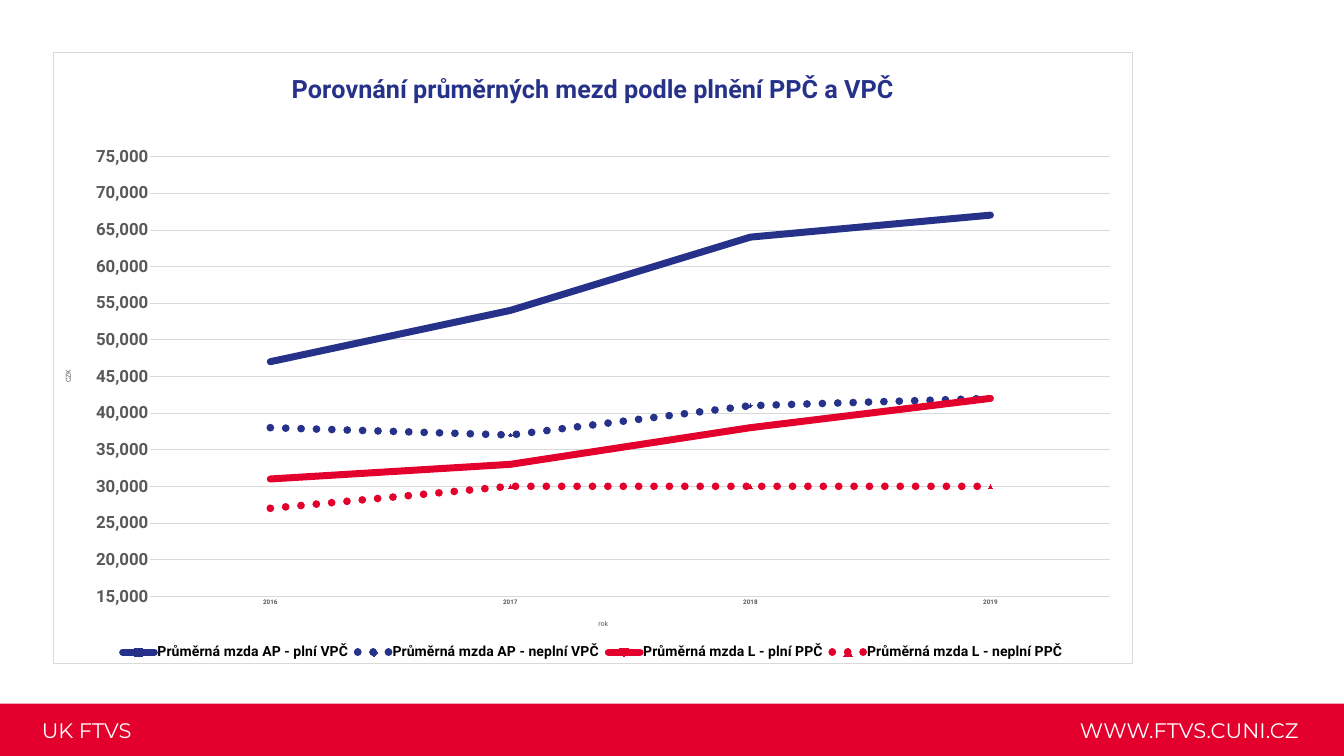
from dataclasses import dataclass

from lxml.etree import SubElement
from pptx import Presentation
from pptx.chart.data import CategoryChartData
from pptx.dml.color import RGBColor
from pptx.enum.chart import XL_CHART_TYPE as ChartType, XL_LEGEND_POSITION as LegendPosition
from pptx.enum.chart import XL_TICK_MARK as TickMark
from pptx.enum.dml import MSO_LINE as Dash
from pptx.enum.shapes import MSO_SHAPE as Shape
from pptx.enum.text import MSO_ANCHOR as Anchor, MSO_AUTO_SIZE as AutoSize, PP_ALIGN as Align
from pptx.oxml import parse_xml
from pptx.oxml.ns import nsdecls, qn
from pptx.util import Inches, Pt


@dataclass(frozen=True)
class Theme:
    """Colours, fonts and type sizes of the slide."""
    red: str = "E3002C"
    blue: str = "263289"
    white: str = "FFFFFF"
    black: str = "000000"
    grey: str = "595959"
    rule: str = "D9D9D9"
    body_font: str = "Roboto"
    footer_font: str = "Montserrat"
    title_size: int = 36
    footer_size: int = 30
    value_size: int = 24
    legend_size: int = 20
    small_size: int = 10
    category_size: int = 9
    rule_width: float = 0.75


THEME = Theme()
YEARS = ["2016", "2017", "2018", "2019"]
WAGES = [
    ("Průměrná mzda AP - plní VPČ", [47000, 54000, 64000, 67000], THEME.blue, False),
    ("Průměrná mzda AP - neplní VPČ", [38000, 37000, 41000, 42000], THEME.blue, True),
    ("Průměrná mzda L - plní PPČ", [31000, 33000, 38000, 42000], THEME.red, False),
    ("Průměrná mzda L - neplní PPČ", [27000, 30000, 30000, 30000], THEME.red, True),
]


def style_font(font, size, color, bold=False, name=THEME.body_font):
    """Set the size, colour, weight and name of a font."""
    font.size, font.bold, font.name = Pt(size), bold, name
    font.color.rgb = RGBColor.from_string(color)


def write_text(text_frame, text, align=None, **font_format):
    """Write one formatted paragraph into a text frame."""
    paragraph = text_frame.paragraphs[0]
    paragraph.alignment = align
    run = paragraph.add_run()
    run.text = text
    style_font(run.font, **font_format)


def style_line(line, color, width):
    """Set the colour and width of a line."""
    line.color.rgb = RGBColor.from_string(color)
    line.width = Pt(width)


def add_band(slide):
    """Add the red band along the bottom edge."""
    band = slide.shapes.add_shape(
        Shape.RECTANGLE, Inches(-0.03), Inches(13.96), Inches(26.72), Inches(1.06))
    band.shadow.inherit = False
    band.fill.solid()
    band.fill.fore_color.rgb = RGBColor.from_string(THEME.red)
    band.line.fill.background()


def add_footer_text(slide, text, left, align):
    """Add one line of text on the footer band."""
    box = slide.shapes.add_textbox(Inches(left), Inches(14.18), Inches(7.07), Inches(0.61))
    frame = box.text_frame
    frame.word_wrap = True
    frame.auto_size = AutoSize.SHAPE_TO_FIT_TEXT
    frame.vertical_anchor = Anchor.MIDDLE
    frame.margin_left = frame.margin_right = Inches(0.06)
    frame.margin_top = frame.margin_bottom = Inches(0.06)
    write_text(frame, text, align=align, size=THEME.footer_size,
               color=THEME.white, name=THEME.footer_font)


def style_axis(axis, title, size):
    """Format the title and tick labels of an axis."""
    axis.major_tick_mark = axis.minor_tick_mark = TickMark.NONE
    style_font(axis.tick_labels.font, size, THEME.grey, bold=True)
    write_text(axis.axis_title.text_frame, title, size=THEME.small_size, color=THEME.grey)


def style_value_axis(axis):
    """Set the scale, number format and gridlines of the value axis."""
    style_axis(axis, "CZK", THEME.value_size)
    axis.minimum_scale, axis.maximum_scale, axis.major_unit = 15000, 75000, 5000
    axis.tick_labels.number_format = "#,##0"
    axis.tick_labels.number_format_is_linked = False
    axis.format.line.fill.background()
    style_line(axis.major_gridlines.format.line, THEME.rule, THEME.rule_width)
    body = axis.axis_title.text_frame._txBody.bodyPr
    body.set("rot", "-5400000")
    body.set("vert", "horz")


def style_series(series, color, dotted):
    """Draw a series as a solid or dotted line with round ends."""
    series.smooth = False
    series.marker.style = None
    line = series.format.line
    style_line(line, color, 11 if dotted else 10)
    if dotted:
        line.dash_style = Dash.ROUND_DOT
    series.format.line._get_or_add_ln().set("cap", "rnd")


def frame_chart(chart):
    """Give the chart area a white fill and a thin border."""
    area = parse_xml(
        f'<c:spPr {nsdecls("c", "a")}><a:solidFill><a:srgbClr val="{THEME.white}"/></a:solidFill>'
        f'<a:ln w="{Pt(THEME.rule_width)}"><a:solidFill><a:srgbClr val="{THEME.rule}"/>'
        '</a:solidFill></a:ln></c:spPr>')
    chart._chartSpace.find(qn("c:chart")).addnext(area)


def place_plot(chart, **fractions):
    """Place the inner plot area by fractions of the chart area."""
    plot_area = chart._chartSpace.chart.plotArea
    for old_layout in plot_area.findall(qn("c:layout")):
        plot_area.remove(old_layout)
    layout = parse_xml(f'<c:layout {nsdecls("c")}/>')
    plot_area.insert(0, layout)
    manual = SubElement(layout, qn("c:manualLayout"))
    settings = {"layoutTarget": "inner", "xMode": "edge", "yMode": "edge", **fractions}
    for tag, value in settings.items():
        SubElement(manual, qn(f"c:{tag}")).set("val", str(value))


def add_wage_chart(slide):
    """Add the line chart that compares average wages."""
    data = CategoryChartData(number_format="#,##0")
    data.categories = YEARS
    for name, values, _, _ in WAGES:
        data.add_series(name, values)
    chart = slide.shapes.add_chart(
        ChartType.LINE, Inches(1.05), Inches(1.04), Inches(21.42), Inches(12.13), data).chart
    style_font(chart.font, THEME.small_size, THEME.black)
    write_text(chart.chart_title.text_frame, "Porovnání průměrných mezd podle plnění PPČ a VPČ",
               size=THEME.title_size, color=THEME.blue, bold=True)
    chart.chart_title.include_in_layout = False
    style_axis(chart.category_axis, "rok", THEME.category_size)
    style_line(chart.category_axis.format.line, THEME.rule, THEME.rule_width)
    style_value_axis(chart.value_axis)
    chart.plots[0].vary_by_categories = False
    for series, (_, _, color, dotted) in zip(chart.plots[0].series, WAGES):
        style_series(series, color, dotted)
    chart.has_legend = True
    chart.legend.position = LegendPosition.BOTTOM
    chart.legend.include_in_layout = False
    style_font(chart.legend.font, THEME.legend_size, THEME.black, bold=True)
    place_plot(chart, x=0.09, y=0.17, w=0.89, h=0.72)
    frame_chart(chart)


def main():
    """Build and save the slide."""
    presentation = Presentation()
    presentation.slide_width, presentation.slide_height = Inches(26.67), Inches(15)
    slide = presentation.slides.add_slide(presentation.slide_layouts[6])
    add_band(slide)
    add_footer_text(slide, "WWW.FTVS.CUNI.CZ", 18.76, Align.RIGHT)
    add_footer_text(slide, "UK FTVS", 0.77, Align.LEFT)
    add_wage_chart(slide)
    presentation.save("out.pptx")


if __name__ == "__main__":
    main()
